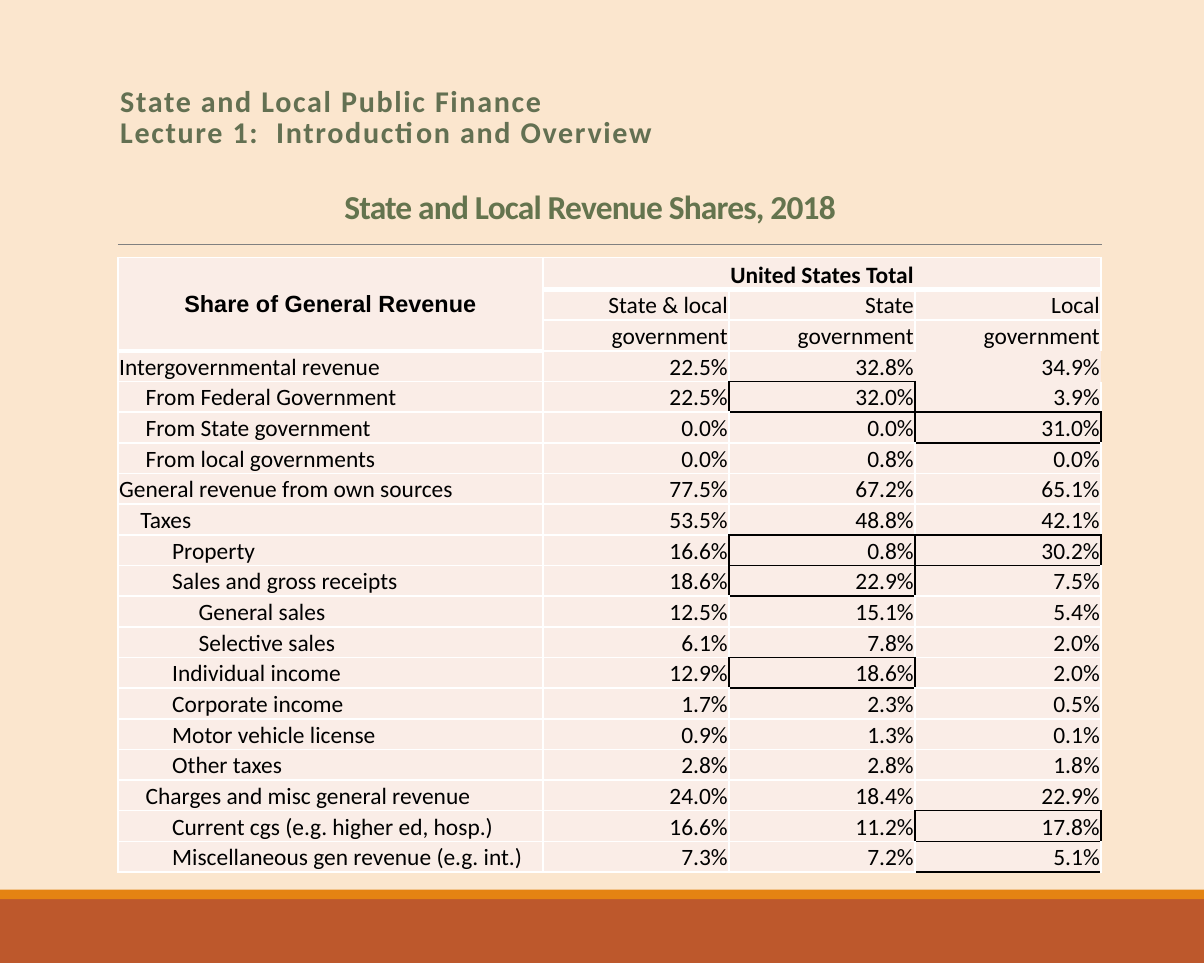
"""Build the slide on state and local revenue shares in 2018."""
from lxml.etree import SubElement
from pptx import Presentation
from pptx.dml.color import RGBColor
from pptx.enum.shapes import MSO_CONNECTOR as CONNECTOR, MSO_SHAPE as SHAPE
from pptx.enum.text import MSO_ANCHOR as ANCHOR, MSO_AUTO_SIZE as AUTO_SIZE, PP_ALIGN as ALIGN
from pptx.oxml.ns import qn
from pptx.util import Pt

PX = 4572
COLORS = {
    "sand": "FBE6CE", "rust": "BD582C", "orange": "E48312", "rule": "808080",
    "course": "637052", "heading": "64744E", "cell": "FAEDE7",
    "white": "FFFFFF", "black": "000000",
}
HEADERS = ["State & local", "State", "Local"]
REVENUES = [
    (0, "Intergovernmental revenue", "22.5%", "32.8%", "34.9%"),
    (44, "From Federal Government", "22.5%", "32.0%", "3.9%"),
    (44, "From State government", "0.0%", "0.0%", "31.0%"),
    (44, "From local governments", "0.0%", "0.8%", "0.0%"),
    (0, "General revenue from own sources", "77.5%", "67.2%", "65.1%"),
    (35, "Taxes", "53.5%", "48.8%", "42.1%"),
    (88, "Property", "16.6%", "0.8%", "30.2%"),
    (88, "Sales and gross receipts", "18.6%", "22.9%", "7.5%"),
    (132, "General sales", "12.5%", "15.1%", "5.4%"),
    (132, "Selective sales", "6.1%", "7.8%", "2.0%"),
    (88, "Individual income", "12.9%", "18.6%", "2.0%"),
    (88, "Corporate income", "1.7%", "2.3%", "0.5%"),
    (88, "Motor vehicle license", "0.9%", "1.3%", "0.1%"),
    (88, "Other taxes", "2.8%", "2.8%", "1.8%"),
    (44, "Charges and misc general revenue", "24.0%", "18.4%", "22.9%"),
    (88, "Current cgs (e.g. higher ed, hosp.)", "16.6%", "11.2%", "17.8%"),
    (88, "Miscellaneous gen revenue (e.g. int.)", "7.3%", "7.2%", "5.1%"),
]
LAST_COLUMN_END = (20, 3)
FRAMED = {(4, 2), (5, 3), (9, 2), (9, 3), (10, 2), (13, 2), (18, 3), LAST_COLUMN_END}
BORDERLESS = (3, 3)
THICK_TOP = {(1, 1), (1, 2), (1, 3), (3, 0)}
SIDES = {"a:lnL": (0, -1), "a:lnR": (0, 1), "a:lnT": (-1, 0), "a:lnB": (1, 0)}


def add_run(paragraph, text, size, color, bold=False, font="Calibri", spacing=0):
    run = paragraph.add_run()
    run.text = text
    run.font.name = font
    run.font.size = Pt(size)
    run.font.bold = bold
    run.font.color.rgb = RGBColor.from_string(COLORS[color])
    if spacing:
        run.font._element.set("spc", str(spacing))


def add_border(properties, side, position):
    step = SIDES[side]
    neighbour = (position[0] + step[0], position[1] + step[1])
    thick = step[0] and max(position, neighbour) in THICK_TOP
    line = SubElement(properties, qn(side), w=str(Pt(3 if thick else 1)))
    if BORDERLESS in (position, neighbour):
        SubElement(line, qn("a:noFill"))
        return
    color = "black" if FRAMED & {position, neighbour} else "white"
    solid = SubElement(line, qn("a:solidFill"))
    SubElement(solid, qn("a:srgbClr"), val=COLORS[color])


presentation = Presentation()
presentation.slide_width = 2000 * PX
presentation.slide_height = 1600 * PX
slide = presentation.slides.add_slide(presentation.slide_layouts[5])
slide.background.fill.solid()
slide.background.fill.fore_color.rgb = RGBColor.from_string(COLORS["sand"])

for top, height, color in [(1494, 106, "rust"), (1478, 16, "orange")]:
    band = slide.shapes.add_shape(SHAPE.RECTANGLE, 0, top * PX, 2000 * PX, height * PX)
    band.shadow.inherit = False
    band.fill.solid()
    band.fill.fore_color.rgb = RGBColor.from_string(COLORS[color])
    band.line.fill.background()

rule = slide.shapes.add_connector(CONNECTOR.STRAIGHT, 196 * PX, 406 * PX, 1830 * PX, 406 * PX)
rule.line.color.rgb = RGBColor.from_string(COLORS["rule"])
rule.line.width = Pt(0.5)
SubElement(rule._element.spPr, qn("a:effectLst"))

course = slide.shapes.add_textbox(180 * PX, 46 * PX, 1650 * PX, 212 * PX)
heading = slide.shapes.title
heading.left, heading.top, heading.width, heading.height = 552 * PX, 304 * PX, 1278 * PX, 82 * PX
for part in (course, heading):
    part.text_frame.word_wrap = True
    part.text_frame.auto_size = AUTO_SIZE.NONE
    part.text_frame.vertical_anchor = ANCHOR.BOTTOM
    part.text_frame.paragraphs[0].alignment = ALIGN.LEFT
    part.text_frame.paragraphs[0].line_spacing = 0.85

course_lines = course.text_frame.paragraphs[0]
add_run(course_lines, "State and Local Public Finance", 18, "course", True, spacing=100)
course_lines.add_line_break()
add_run(course_lines, "Lecture 1:  Introduction and Overview", 18, "course", True, spacing=100)
add_run(heading.text_frame.paragraphs[0], "State and Local Revenue Shares, 2018",
        20, "heading", True, spacing=-50)

rows = [
    (0, "Share of General Revenue", "United States Total", "", ""),
    (0, "", *HEADERS),
    (0, "", *["government"] * 3),
    *REVENUES,
]
shares = slide.shapes.add_table(len(rows), 4, 196 * PX, 428 * PX, 1633 * PX, 1022 * PX).table
shares.first_row = False
shares.horz_banding = False
for column, width in zip(shares.columns, [706, 309, 309, 309]):
    column.width = width * PX
for r, (indent, *texts) in enumerate(rows):
    shares.rows[r].height = (51 if r else 53) * PX
    for c, text in enumerate(texts):
        cell = shares.cell(r, c)
        cell.margin_left = cell.margin_right = cell.margin_top = 2 * PX
        cell.margin_bottom = 0
        properties = cell._tc.get_or_add_tcPr()
        for side in SIDES:
            add_border(properties, side, (r, c))
        cell.fill.solid()
        cell.fill.fore_color.rgb = RGBColor.from_string(COLORS["cell"])
        cell.vertical_anchor = ANCHOR.BOTTOM if c or r else ANCHOR.MIDDLE
        paragraph = cell.text_frame.paragraphs[0]
        paragraph.alignment = ALIGN.CENTER if r == 0 else ALIGN.RIGHT if c else ALIGN.LEFT
        if c == 0 and indent:
            paragraph._p.get_or_add_pPr().set("marL", str(indent * PX))
        if text:
            font = "Arial" if (r, c) == (0, 0) else "Calibri"
            add_run(paragraph, text, 14, "black", r == 0, font)
shares.cell(0, 0).merge(shares.cell(2, 0))
shares.cell(0, 1).merge(shares.cell(0, 3))

presentation.save("out.pptx")
